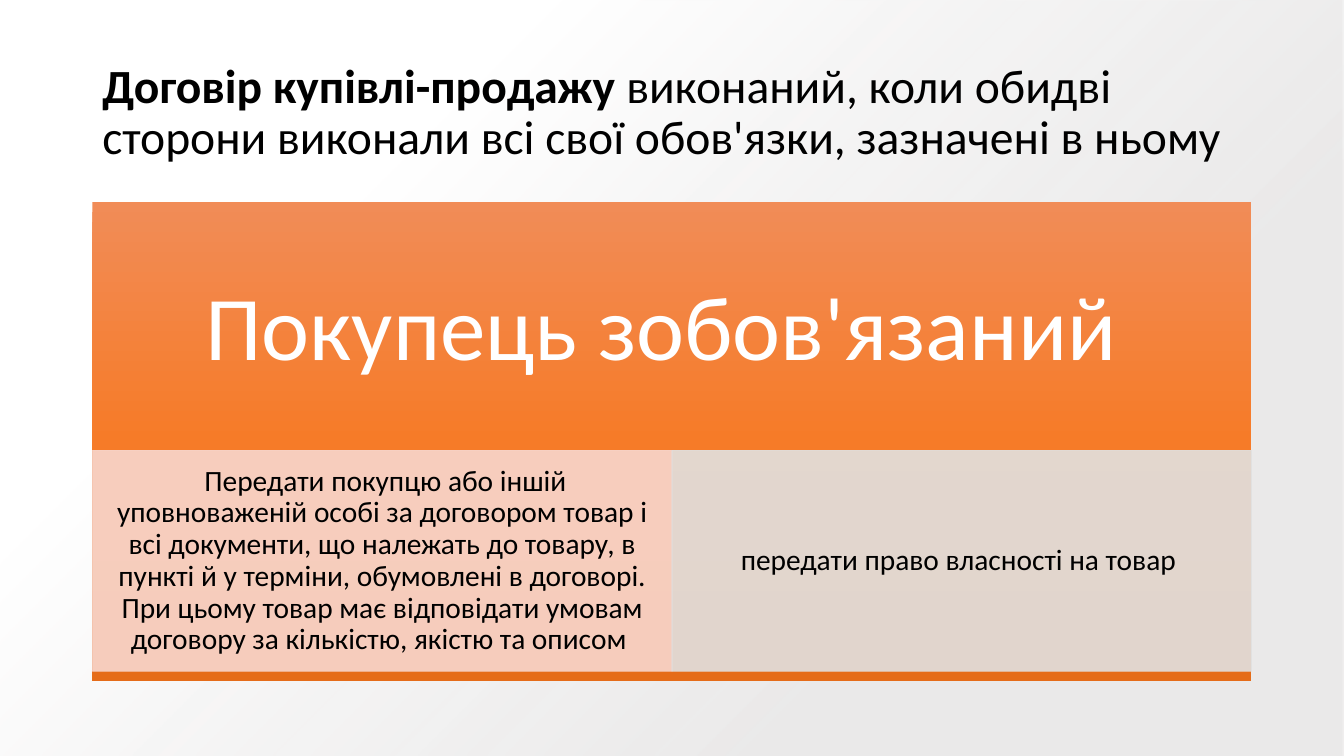
from dataclasses import dataclass

from lxml.etree import SubElement
from pptx import Presentation
from pptx.dml.color import RGBColor
from pptx.enum.shapes import MSO_SHAPE
from pptx.enum.text import MSO_ANCHOR, PP_ALIGN
from pptx.oxml import parse_xml
from pptx.oxml.ns import nsdecls, qn
from pptx.util import Pt

COLORS = {
    "black": "000000", "white": "FFFFFF", "mist": "E7E6E6",
    "orange_light": "F18C57", "orange": "F67B28", "orange_dark": "E56C19",
    "peach": "F8D7CE", "grey": "E1E1E1",
}
FONT = "Calibri"
WIDTH, HEIGHT = 960, 540
LEFT, BLOCK_W = 66, 828
DUTY_W = BLOCK_W / 2
DUTY_TOP, DUTY_H = 321.8, 157.7
DUTY_OPACITY = 90


@dataclass
class Stop:
    pos: int
    color: str
    opacity: int = 100


@dataclass
class Duty:
    text: str
    color: str


def rgb(name: str) -> RGBColor:
    return RGBColor.from_string(COLORS[name])


def add_rect(s, x: float, y: float, w: float, h: float):
    sp = s.shapes.add_shape(MSO_SHAPE.RECTANGLE, Pt(x), Pt(y), Pt(w), Pt(h))
    sp.shadow.inherit = False
    sp.line.fill.background()
    return sp


def set_gradient(sp, stops: list[Stop], direction: str) -> None:
    items = "".join(
        f'<a:gs pos="{st.pos * 1000}"><a:srgbClr val="{COLORS[st.color]}">'
        f'<a:alpha val="{st.opacity * 1000}"/></a:srgbClr></a:gs>'
        for st in stops
    )
    sp.fill.background()
    sp_pr = sp._element.spPr
    sp_pr.replace(sp_pr.find(qn("a:noFill")), parse_xml(
        f'<a:gradFill {nsdecls("a")} rotWithShape="1">'
        f"<a:gsLst>{items}</a:gsLst>{direction}</a:gradFill>"
    ))


def set_opacity(sp, percent: int) -> None:
    """Apply one opacity to the solid fill and the outline."""
    for clr in sp._element.spPr.iter(qn("a:srgbClr")):
        SubElement(clr, qn("a:alpha")).set("val", str(percent * 1000))


def set_frame(sp, side: float, top: float):
    tf = sp.text_frame
    tf.word_wrap = True
    tf.vertical_anchor = MSO_ANCHOR.MIDDLE
    tf.margin_left = tf.margin_right = Pt(side)
    tf.margin_top = tf.margin_bottom = Pt(top)
    p = tf.paragraphs[0]
    p.line_spacing = 0.9
    return p


def add_run(p, text: str, *, size: float, color: str = "black",
            bold: bool = False) -> None:
    r = p.add_run()
    r.text = text
    r.font.name = FONT
    r.font.size = Pt(size)
    r.font.bold = bold
    r.font.color.rgb = rgb(color)


def add_duty(s, duty: Duty, x: float) -> None:
    sp = add_rect(s, x, DUTY_TOP, DUTY_W, DUTY_H)
    sp.fill.solid()
    sp.fill.fore_color.rgb = rgb(duty.color)
    sp.line.color.rgb = rgb(duty.color)
    sp.line.width = Pt(0.5)
    set_opacity(sp, DUTY_OPACITY)
    p = set_frame(sp, 11.5, 2)
    p.alignment = PP_ALIGN.CENTER
    add_run(p, duty.text, size=21)


DUTIES = [
    Duty(" Передати покупцю або іншій уповноваженій особі за договором товар і "
         "всі документи, що належать до товару, в пункті й у терміни, "
         "обумовлені в договорі. При цьому товар має відповідати умовам "
         "договору за кількістю, якістю та описом ", "peach"),
    Duty("передати право власності на товар ", "grey"),
]


def main() -> None:
    prs = Presentation()
    prs.slide_width, prs.slide_height = Pt(WIDTH), Pt(HEIGHT)
    s = prs.slides.add_slide(prs.slide_layouts[6])

    # Backdrop
    backdrop = add_rect(s, 0, 0, WIDTH, HEIGHT)
    set_gradient(
        backdrop, [Stop(28, "mist", 84), Stop(74, "white")],
        '<a:path path="circle"><a:fillToRect l="100000" t="100000"/></a:path>')

    # Title
    title = s.shapes.add_textbox(Pt(LEFT), Pt(28.8), Pt(BLOCK_W), Pt(104.4))
    p = set_frame(title, 7.2, 3.6)
    add_run(p, "Договір купівлі-продажу", size=34, bold=True)
    add_run(p, " виконаний, коли обидві сторони виконали всі свої обов'язки, "
               "зазначені в ньому ", size=34)

    # Orange block with its heading
    block = add_rect(s, LEFT, 144, BLOCK_W, 342.7)
    set_gradient(
        block,
        [Stop(0, "orange_light"), Stop(50, "orange"), Stop(100, "orange_dark")],
        '<a:lin ang="5400000" scaled="0"/>')
    heading = s.shapes.add_textbox(Pt(LEFT), Pt(144), Pt(BLOCK_W), Pt(185))
    p = set_frame(heading, 36.7, 36.7)
    p.alignment = PP_ALIGN.CENTER
    add_run(p, "Покупець зобов'язаний ", size=65, color="white")

    # Duties side by side
    for i, duty in enumerate(DUTIES):
        add_duty(s, duty, LEFT + i * DUTY_W)

    prs.save("out.pptx")


if __name__ == "__main__":
    main()
